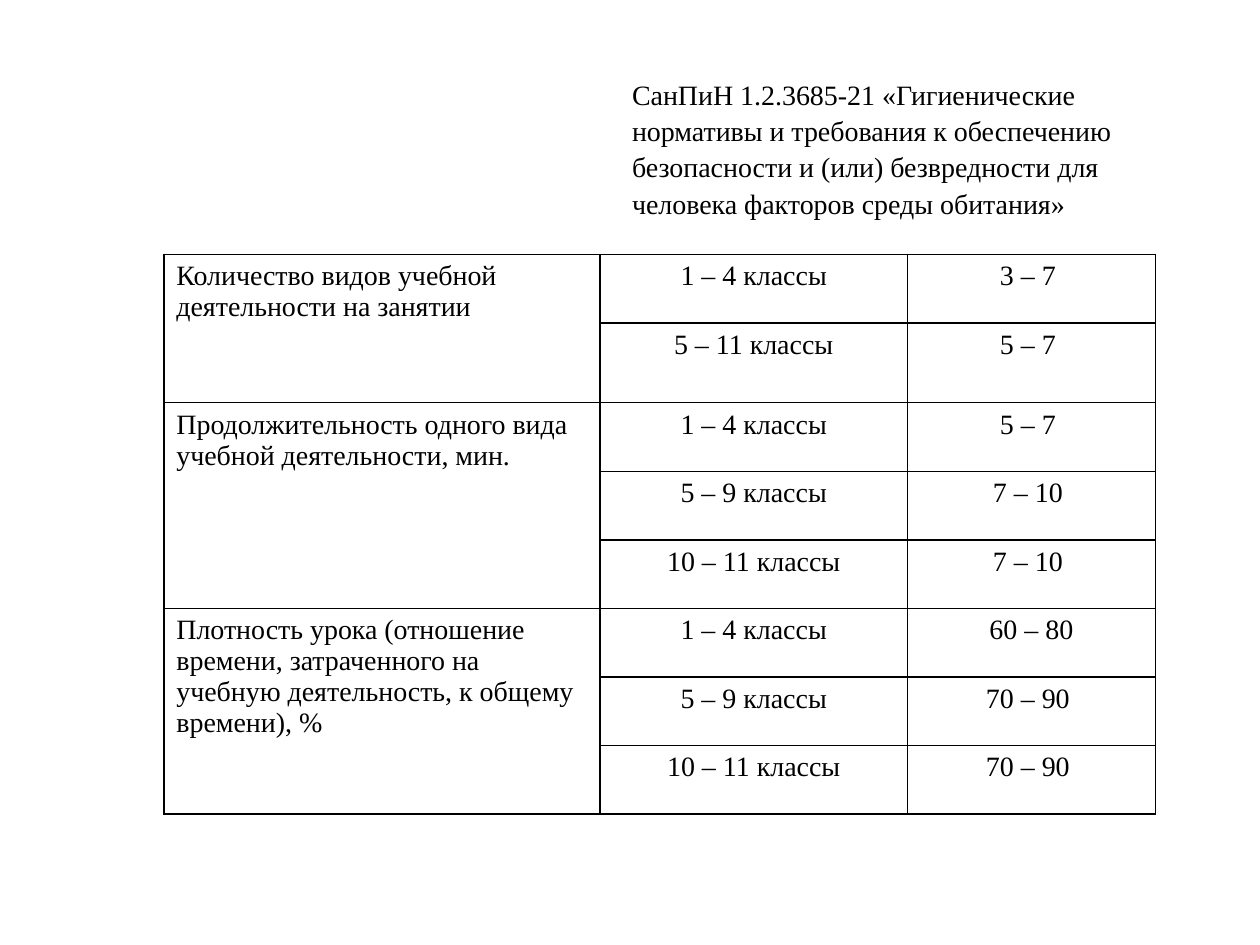
import pptx
import pptx.util
import pptx.dml.color
import pptx.enum.text
import pptx.oxml
import pptx.oxml.ns

Pt = pptx.util.Pt
ALIGN = pptx.enum.text.PP_ALIGN
BLACK = "000000"
FONT = {"name": "Times New Roman", "size": Pt(16), "bold": False}

HEADING = ("СанПиН 1.2.3685-21 «Гигиенические нормативы и требования к обеспечению "
           "безопасности и (или) безвредности для человека факторов среды обитания»")

# Each norm: its name, then (classes, value) rows
NORMS = [
    ("Количество видов учебной деятельности на занятии",
     [("1 – 4 классы", "3 – 7 "), ("5 – 11 классы", "5 – 7 ")]),
    ("Продолжительность одного вида учебной деятельности, мин.",
     [("1 – 4 классы", "5 – 7 "), ("5 – 9 классы", "7 – 10 "),
      ("10 – 11 классы", "7 – 10 ")]),
    ("Плотность урока (отношение времени, затраченного на учебную "
     "деятельность, к общему времени), %",
     [("1 – 4 классы", "60 – 80"), ("5 – 9 классы", "70 – 90 "),
      ("10 – 11 классы", "70 – 90 ")]),
]
COLUMN_WIDTHS = [249.3, 175.6, 141.8]
ROW_HEIGHT = 39.15
TALL_ROW, TALL_HEIGHT = 1, 45.7


def color(hex_string):
    return pptx.dml.color.RGBColor.from_string(hex_string)


def write(frame, text, **layout):
    """Fill a text frame with one formatted paragraph."""
    para = frame.paragraphs[0]
    for name, value in layout.items():
        setattr(para, name, value)
    span = para.add_run()
    span.text = text
    for name, value in FONT.items():
        setattr(span.font, name, value)
    span.font.color.rgb = color(BLACK)


def outline_cell(cell, hex_string, width):
    """Clear the fill and draw all four borders."""
    properties = cell._tc.get_or_add_tcPr()
    for side in ("lnL", "lnR", "lnT", "lnB"):
        properties.append(pptx.oxml.parse_xml(
            f'<a:{side} {pptx.oxml.ns.nsdecls("a")} w="{Pt(width)}">'
            f'<a:solidFill><a:srgbClr val="{hex_string}"/></a:solidFill></a:{side}>'))
    cell.fill.background()


def add_heading(page, left, top, width, height):
    box = page.shapes.title
    box.left, box.top, box.width, box.height = map(Pt, (left, top, width, height))
    frame = box.text_frame
    frame_format = {
        "word_wrap": True,
        "auto_size": pptx.enum.text.MSO_AUTO_SIZE.NONE,
        "vertical_anchor": pptx.enum.text.MSO_ANCHOR.TOP,
    }
    for name, value in frame_format.items():
        setattr(frame, name, value)
    write(frame, HEADING, alignment=ALIGN.LEFT, line_spacing=1.08)


def add_norms_table(page, left, top):
    row_count = sum(len(rows) for _, rows in NORMS)
    heights = [ROW_HEIGHT] * row_count
    heights[TALL_ROW] = TALL_HEIGHT
    holder = page.shapes.add_table(
        row_count, len(COLUMN_WIDTHS), Pt(left), Pt(top),
        Pt(sum(COLUMN_WIDTHS)), Pt(sum(heights)))
    table = holder.table
    table.first_row = table.horz_banding = False
    for column, width in zip(table.columns, COLUMN_WIDTHS):
        column.width = Pt(width)
    for row, height in zip(table.rows, heights):
        row.height = Pt(height)
    for cell in table.iter_cells():
        outline_cell(cell, BLACK, 1)

    # One merged name cell beside each group of rows
    first = 0
    for norm, rows in NORMS:
        name_cell = table.cell(first, 0)
        name_cell.merge(table.cell(first + len(rows) - 1, 0))
        write(name_cell.text_frame, norm, alignment=ALIGN.LEFT)
        for index, texts in enumerate(rows, first):
            for column, text in enumerate(texts, 1):
                write(table.cell(index, column).text_frame, text, alignment=ALIGN.CENTER)
        first += len(rows)


def main():
    deck = pptx.Presentation()
    deck.slide_width, deck.slide_height = Pt(720), Pt(540)
    page = deck.slides.add_slide(deck.slide_layouts.get_by_name("Title Only"))
    add_heading(page, 354, 39, 300, 85)
    add_norms_table(page, 93.6, 145.3)
    deck.save("out.pptx")


if __name__ == "__main__":
    main()
